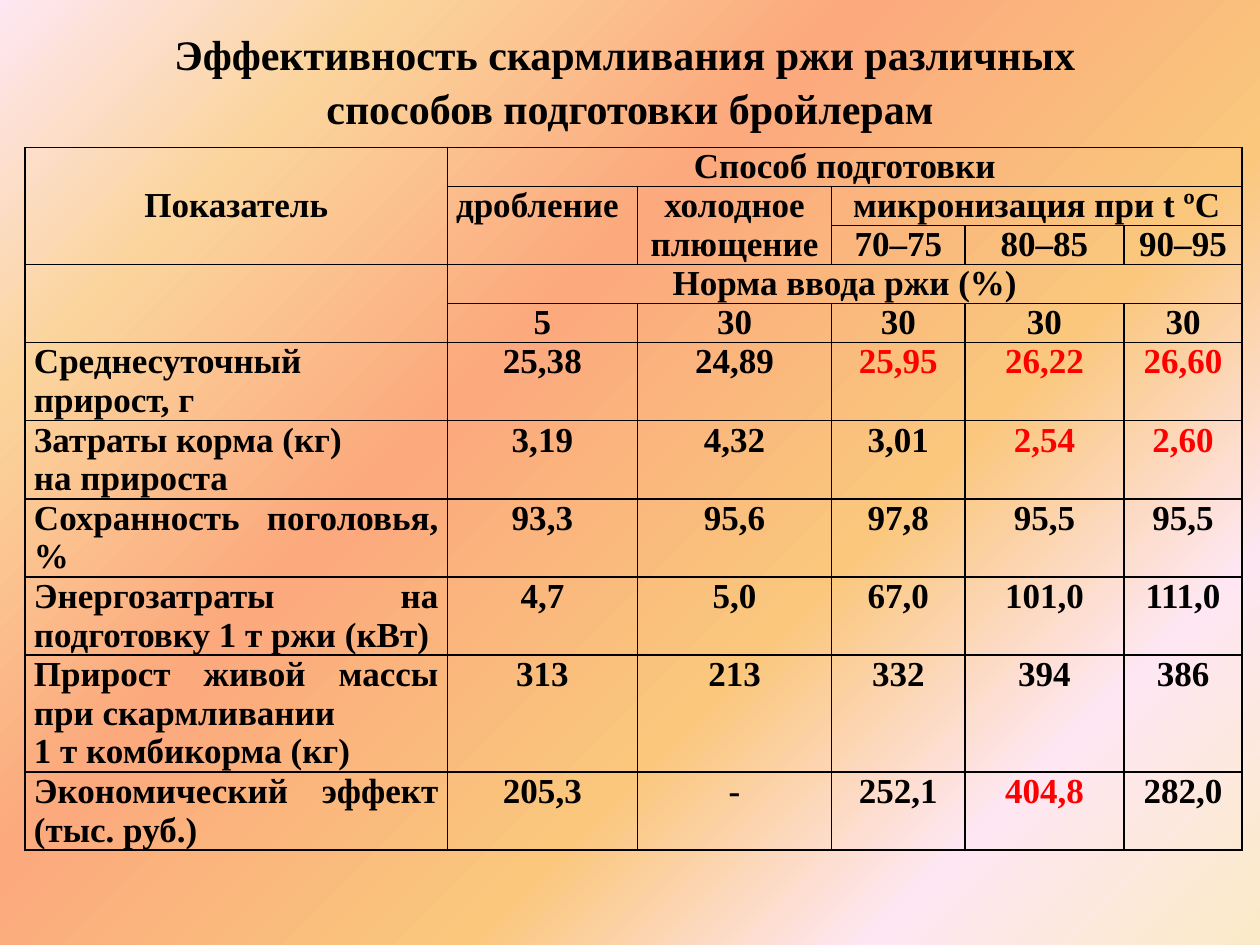
from lxml import etree
from pptx import Presentation
from pptx.dml.color import RGBColor
from pptx.enum.text import MSO_ANCHOR, MSO_AUTO_SIZE, PP_ALIGN
from pptx.oxml.ns import qn
from pptx.util import Inches, Pt

CENTER, JUSTIFY = PP_ALIGN.CENTER, PP_ALIGN.JUSTIFY
TOP, MIDDLE = MSO_ANCHOR.TOP, MSO_ANCHOR.MIDDLE
NO_AUTOFIT = MSO_AUTO_SIZE.NONE
BLACK = RGBColor(0x00, 0x00, 0x00)
RED = RGBColor(0xFF, 0x00, 0x00)
PINK = RGBColor(0xFE, 0xE7, 0xF2)
SAND = RGBColor(0xFB, 0xD4, 0x9C)
SALMON = RGBColor(0xFB, 0xA9, 0x7D)
AMBER = RGBColor(0xFA, 0xC7, 0x7D)
CREAM = RGBColor(0xFB, 0xEA, 0xC7)
BACKGROUND = [(0, PINK), (18, SAND), (39, SALMON), (64, AMBER), (82, PINK), (100, CREAM)]
FONT = "Times New Roman"

TITLE = "Эффективность скармливания ржи различных \nспособов подготовки бройлерам"
COLUMNS = [3.35, 1.51, 1.54, 1.06, 1.26, 0.94]
LINES = [1, 1, 1, 1, 1, 2, 2, 2, 2, 3, 2]
LINE_HEIGHT = 0.31
ROWS = [
    ["Показатель", "Способ подготовки", "", "", "", ""],
    ["", "дробление", "холодное плющение", "микронизация при t ºС", "", ""],
    ["", "", "", "70–75", "80–85", "90–95"],
    ["", "Норма ввода ржи (%)", "", "", "", ""],
    ["", "5", "30", "30", "30", "30"],
    ["Среднесуточный \nприрост, г", "25,38", "24,89", "25,95", "26,22", "26,60"],
    ["Затраты корма (кг) \nна прироста", "3,19", "4,32", "3,01", "2,54", "2,60"],
    ["Сохранность поголовья, %", "93,3", "95,6", "97,8", "95,5", "95,5"],
    ["Энергозатраты на подготовку 1 т ржи (кВт)", "4,7", "5,0", "67,0", "101,0", "111,0"],
    ["Прирост живой массы при скармливании \n1 т комбикорма (кг)",
     "313", "213", "332", "394", "386"],
    ["Экономический эффект (тыс. руб.)", "205,3", "-", "252,1", "404,8", "282,0"],
]
MERGES = [((0, 0), (2, 0)), ((0, 1), (0, 5)), ((1, 1), (2, 1)), ((1, 2), (2, 2)),
          ((1, 3), (1, 5)), ((3, 0), (4, 0)), ((3, 1), (3, 5))]
RED_CELLS = {(5, 3), (5, 4), (5, 5), (6, 4), (6, 5), (10, 4)}
MIDDLE_CELLS = {(0, 0), (2, 3), (2, 4), (2, 5)}
FIRST_DATA_ROW = 5


def set_background(slide):
    fill = slide.background.fill
    fill.gradient()
    fill.gradient_angle = 315
    stops = slide.element.find(".//" + qn("a:gsLst"))
    for stop in list(stops):
        stops.remove(stop)
    for percent, color in BACKGROUND:
        stop = etree.SubElement(stops, qn("a:gs"), pos=str(percent * 1000))
        etree.SubElement(stop, qn("a:srgbClr"), val=str(color))


def format_text(tf, size, color, align):
    for p in tf.paragraphs:
        p.alignment = align
        for r in p.runs:
            r.font.name = FONT
            r.font.size = Pt(size)
            r.font.bold = True
            r.font.color.rgb = color


def set_title(slide):
    sp = slide.shapes.title
    sp.left, sp.top, sp.width, sp.height = map(Inches, (0.5, 0.32, 9, 0.61))
    tf = sp.text_frame
    tf.text = TITLE
    tf.auto_size = NO_AUTOFIT
    tf.vertical_anchor = MIDDLE
    format_text(tf, 24, BLACK, CENTER)
    for p in tf.paragraphs:
        p.line_spacing = 1.08


def set_borders(cell):
    props = cell._tc.get_or_add_tcPr()
    for index, side in enumerate(("a:lnL", "a:lnR", "a:lnT", "a:lnB")):
        line = etree.Element(qn(side), w=str(Pt(1)))
        fill = etree.SubElement(line, qn("a:solidFill"))
        etree.SubElement(fill, qn("a:srgbClr"), val=str(BLACK))
        props.insert(index, line)


def format_cell(cell, row, col):
    cell.margin_left = cell.margin_right = Inches(0.07)
    cell.margin_top = cell.margin_bottom = 0
    cell.vertical_anchor = MIDDLE if (row, col) in MIDDLE_CELLS else TOP
    cell.fill.background()
    set_borders(cell)
    justified = (row, col) == (1, 1) or (col == 0 and row >= FIRST_DATA_ROW)
    color = RED if (row, col) in RED_CELLS else BLACK
    format_text(cell.text_frame, 20, color, JUSTIFY if justified else CENTER)


def add_results_table(slide):
    frame = slide.shapes.add_table(
        len(ROWS), len(COLUMNS), Inches(0.2), Inches(1.17),
        Inches(sum(COLUMNS)), Inches(sum(LINES) * LINE_HEIGHT))
    table = frame.table
    table.first_row = table.horz_banding = False
    for column, width in zip(table.columns, COLUMNS):
        column.width = Inches(width)
    for table_row, lines in zip(table.rows, LINES):
        table_row.height = Inches(lines * LINE_HEIGHT)
    for row, texts in enumerate(ROWS):
        for col, text in enumerate(texts):
            cell = table.cell(row, col)
            cell.text = text
            format_cell(cell, row, col)
    for first, last in MERGES:
        table.cell(*first).merge(table.cell(*last))


def main():
    prs = Presentation()
    prs.slide_width, prs.slide_height = Inches(10), Inches(7.5)
    slide = prs.slides.add_slide(prs.slide_layouts[5])
    set_background(slide)
    set_title(slide)
    add_results_table(slide)
    prs.save("out.pptx")


if __name__ == "__main__":
    main()
